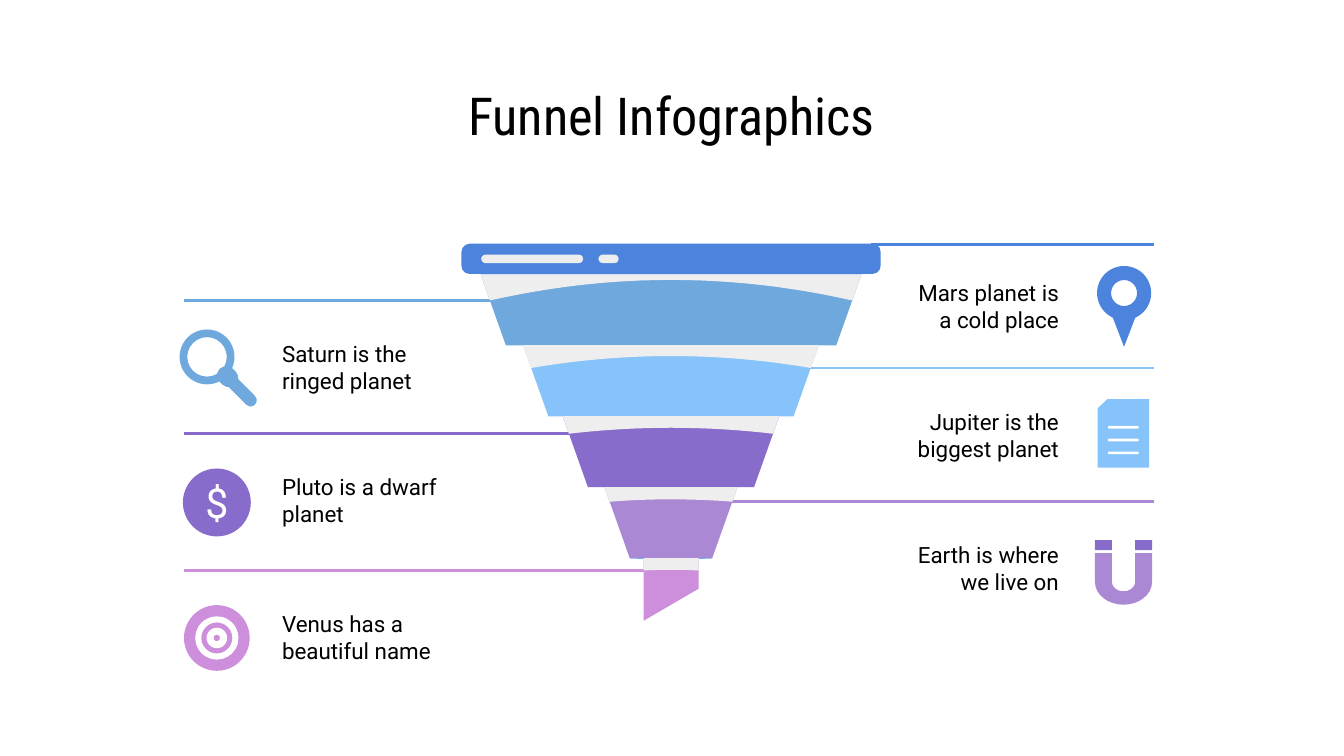
import math

from lxml import etree
from pptx import Presentation
from pptx.dml.color import RGBColor
from pptx.enum import shapes as kinds, text as t
from pptx.oxml.ns import qn
from pptx.util import Pt

COLORS = {
    "royal": "4C84DD", "steel": "6FA8DC", "sky": "85C3FA", "violet": "886CCC",
    "lilac": "AB88D3", "orchid": "CD8FDB", "rim": "64B5FC",
    "gray": "EEEEEE", "white": "FFFFFF", "black": "000000",
}
SHAPE = kinds.MSO_SHAPE
CENTER, TOP, STEP, TAPER = 359.5, 147, 38, 13.5
LEFT_END, RIGHT_END = 98.6, 618

# text, colour, half width at the top, depth of the lid's edge and of its peak
STAGES = [
    ("Saturn is the ringed planet", "steel", 102, 14, 3),
    ("Jupiter is the biggest planet", "sky", 79.2, 12.2, 5.8),
    ("Pluto is a dwarf planet", "violet", 58, 9.4, 6.2),
    ("Earth is where we live on", "lilac", 35.6, 7.8, 6.5),
    ("Venus has a beautiful name", "orchid", 14.75, 6.7, 6.3),
]


def color(name):
    return RGBColor.from_string(COLORS[name])


def paint(shape, fill):
    shape.shadow.inherit = False
    shape.fill.solid()
    shape.fill.fore_color.rgb = color(fill)
    shape.line.fill.background()
    return shape


def add_preset(slide, kind, left, top, width, height, fill, adjust=None, turn=0):
    shape = slide.shapes.add_shape(kind, Pt(left), Pt(top), Pt(width), Pt(height))
    if adjust is not None:
        shape.adjustments[0] = adjust
    shape.rotation = turn
    return paint(shape, fill)


def add_round(slide, x, y, diameter, fill, ring=None):
    """Disc centred on x, y; ring is the band's share of the diameter."""
    kind = SHAPE.OVAL if ring is None else SHAPE.DONUT
    return add_preset(slide, kind, x - diameter / 2, y - diameter / 2,
                      diameter, diameter, fill, ring)


def add_polygon(slide, points, fill):
    corners = [(Pt(x), Pt(y)) for x, y in points]
    builder = slide.shapes.build_freeform(*corners[0], scale=1.0)
    builder.add_line_segments(corners[1:], close=True)
    return paint(builder.convert_to_shape(), fill)


def add_rule(slide, start, end, y, stroke):
    line = slide.shapes.add_connector(
        kinds.MSO_CONNECTOR.STRAIGHT, Pt(start), Pt(y), Pt(end), Pt(y))
    line.line.color.rgb = color(stroke)
    line.line.width = Pt(1.5)
    etree.SubElement(line._element.spPr, qn("a:effectLst"))


def format_text(shape, words, size, font, align, fill="black"):
    frame = shape.text_frame
    frame.text = words
    frame.word_wrap = True
    frame.auto_size = t.MSO_AUTO_SIZE.NONE
    frame.vertical_anchor = t.MSO_ANCHOR.MIDDLE
    frame.margin_left = frame.margin_right = Pt(7.2)
    frame.margin_top = frame.margin_bottom = Pt(7.2)
    paragraph = frame.paragraphs[0]
    paragraph.alignment = align
    paragraph.font.size = Pt(size)
    paragraph.font.name = font
    paragraph.font.color.rgb = color(fill)


def add_label(slide, words, top, on_right):
    left = 470 if on_right else 144
    box = slide.shapes.add_textbox(Pt(left), Pt(top), Pt(104.4), Pt(42.5))
    align = t.PP_ALIGN.RIGHT if on_right else t.PP_ALIGN.LEFT
    format_text(box, words, 12, "Roboto", align)
    if on_right:
        box.text_frame.margin_left = Pt(14.4)


def add_title(slide, words):
    title = slide.shapes.title
    title.left, title.top, title.width, title.height = map(Pt, (224.6, 42.5, 270, 38))
    format_text(title, words, 28, "Roboto Condensed", t.PP_ALIGN.CENTER)


def add_header(slide):
    add_rule(slide, 466.6, RIGHT_END, 131, "royal")
    add_preset(slide, SHAPE.ROUNDED_RECTANGLE, 247.2, 130.6, 224.6, 16.2, "royal", 0.27)
    for left, width in ((257.8, 54.6), (320.6, 10.8)):
        add_preset(slide, SHAPE.ROUNDED_RECTANGLE, left, 136.4, width, 4.6, "gray", 0.5)
    add_label(slide, "Mars planet is a cold place", 142.6, True)


def add_stage(slide, index, words, fill, half, depth, peak):
    """One funnel segment with its gray lid, leader line and label."""
    top, on_right = TOP + index * STEP, index % 2 == 1
    is_spout = index == len(STAGES) - 1
    taper = 0 if is_spout else TAPER
    edge = half - taper * depth / STEP
    y = top + depth
    if on_right:
        add_rule(slide, CENTER + edge - 1.5, RIGHT_END, y, fill)
    else:
        add_rule(slide, LEFT_END, CENTER - edge + 1.5, y, fill)

    left_bottom, right_bottom = (33.6, 16.4) if is_spout else (STEP, STEP)
    rim = [(CENTER + half, top), (CENTER - half, top)]
    add_polygon(slide, rim + [(CENTER - half + taper, top + left_bottom),
                              (CENTER + half - taper, top + right_bottom)], fill)
    steps = [n / 12 for n in range(-12, 13)]
    arc = [(CENTER + s * edge, top + peak + (depth - peak) * s * s) for s in steps]
    add_polygon(slide, rim + arc, "gray")
    add_label(slide, words, y + 14.4, on_right)


def add_magnifier(slide):
    for x, y, length, thickness in ((127.4, 207.6, 26, 6.6), (122, 201.8, 12, 10)):
        add_preset(slide, SHAPE.ROUNDED_RECTANGLE, x - length / 2, y - thickness / 2,
                   length, thickness, "steel", 0.5, 45)
    add_round(slide, 110.9, 191.2, 29.4, "steel", 0.14)


def add_pin(slide):
    add_polygon(slide, [(595.6, 168.6), (602.2, 185.8), (608.8, 168.6)], "royal")
    add_round(slide, 602.2, 157, 29, "royal", 0.26)


def add_dollar(slide):
    coin = add_round(slide, 116.2, 269.2, 36.4, "violet")
    format_text(coin, "$", 22, "Roboto", t.PP_ALIGN.CENTER, "white")
    frame = coin.text_frame
    frame.margin_left = frame.margin_right = 0
    frame.margin_top = frame.margin_bottom = 0


def add_target(slide):
    add_round(slide, 116.2, 341.8, 35.2, "orchid")
    add_round(slide, 116.2, 341.8, 23.2, "white", 0.14)
    add_round(slide, 116.2, 341.8, 11, "white", 0.34)


def add_document(slide):
    add_polygon(slide, [(593.4, 213.8), (615.6, 213.8), (615.6, 250.6),
                        (588, 250.6), (588, 218.8)], "sky")
    for row in range(3):
        add_preset(slide, SHAPE.ROUNDED_RECTANGLE, 593.5, 228.2 + 6.85 * row,
                   16.6, 1.4, "white", 0.5)


def add_magnet(slide):
    x, top, bend = 601.9, 296.4, 311.8

    def half_turn(width, height):
        angles = [math.pi * n / 16 for n in range(17)]
        return [(x - width * math.cos(a), bend + height * math.sin(a)) for a in angles]

    outer, inner = half_turn(15.3, 12.2), half_turn(6.2, 5)
    add_polygon(slide, [(x - 15.3, top)] + outer + [(x + 15.3, top), (x + 6.2, top)]
                + inner[::-1] + [(x - 6.2, top)], "lilac")
    for left in (x - 15.3, x + 6.2):
        add_preset(slide, SHAPE.RECTANGLE, left, 289.3, 9.1, 5.4, "violet")


def main():
    presentation = Presentation()
    presentation.slide_width, presentation.slide_height = Pt(720), Pt(405)
    slide = presentation.slides.add_slide(presentation.slide_layouts[5])
    add_title(slide, "Funnel Infographics")
    add_preset(slide, SHAPE.OVAL, CENTER - 22.3, 298.8, 44.6, 0.7, "rim")
    for index, stage in enumerate(STAGES):
        add_stage(slide, index, *stage)
    add_header(slide)
    for add_icon in (add_magnifier, add_pin, add_dollar, add_target,
                     add_document, add_magnet):
        add_icon(slide)
    presentation.save("out.pptx")


if __name__ == "__main__":
    main()
